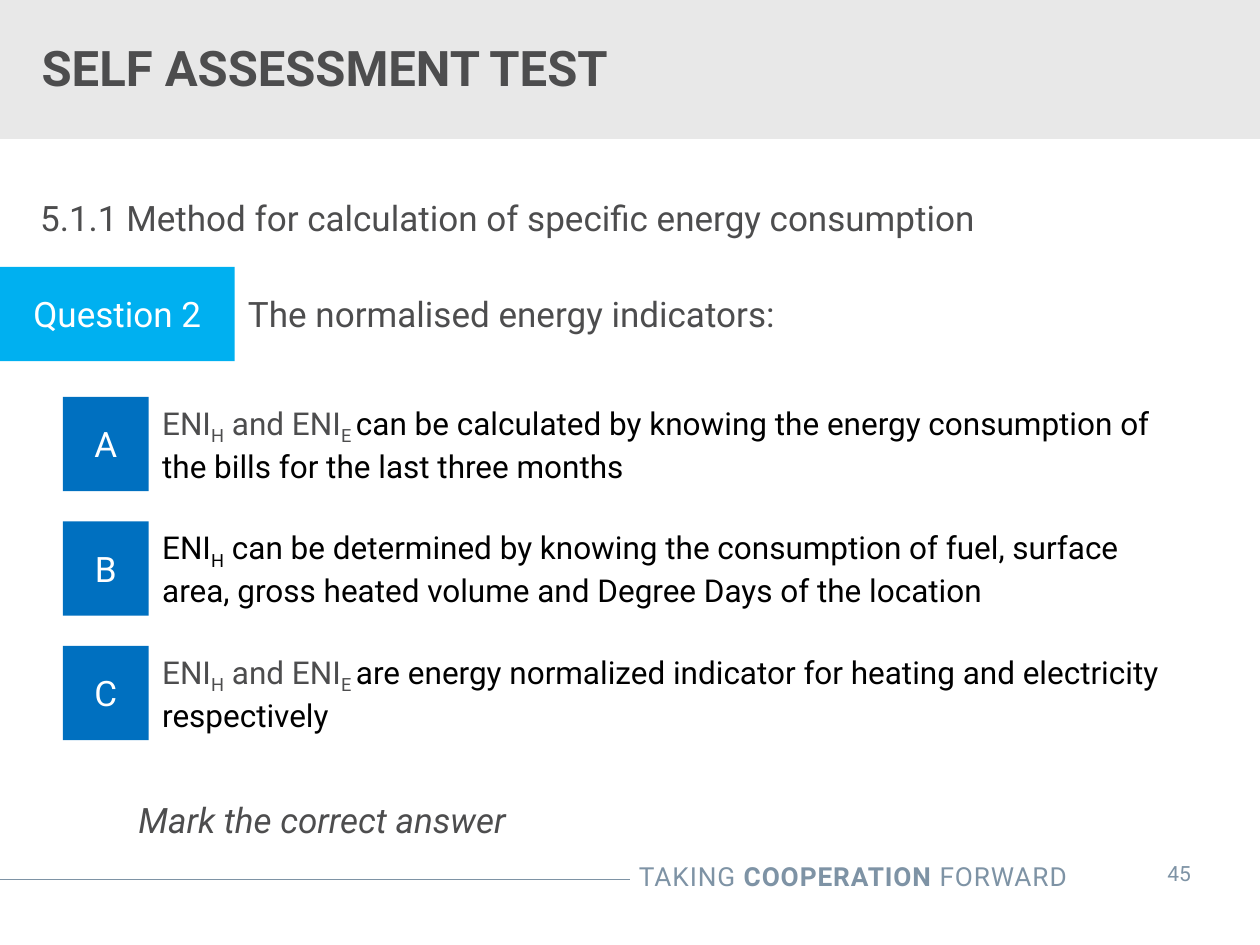
"""Build the self assessment slide on normalised energy indicators."""
from lxml import etree
from pptx import Presentation
from pptx.dml.color import RGBColor
from pptx.enum.shapes import MSO_CONNECTOR, MSO_SHAPE
from pptx.enum.text import MSO_ANCHOR, MSO_AUTO_SIZE, PP_ALIGN
from pptx.oxml.ns import qn
from pptx.util import Cm, Pt

RECTANGLE, STRAIGHT = MSO_SHAPE.RECTANGLE, MSO_CONNECTOR.STRAIGHT
LEFT, CENTER, RIGHT = PP_ALIGN.LEFT, PP_ALIGN.CENTER, PP_ALIGN.RIGHT
TOP, MIDDLE = MSO_ANCHOR.TOP, MSO_ANCHOR.MIDDLE
NO_AUTOFIT = MSO_AUTO_SIZE.NONE

WHITE = RGBColor(0xFF, 0xFF, 0xFF)
BLACK = RGBColor(0x00, 0x00, 0x00)
DARK_GREY = RGBColor(0x4D, 0x4D, 0x4E)
BAND_GREY = RGBColor(0xE8, 0xE8, 0xE8)
SLATE = RGBColor(0x7E, 0x93, 0xA5)
SKY_BLUE = RGBColor(0x00, 0xB0, 0xF0)
BLUE = RGBColor(0x00, 0x70, 0xC0)

prs = Presentation()
prs.slide_width, prs.slide_height = Cm(25.4), Cm(19.05)
slide = prs.slides.add_slide(prs.slide_layouts[5])
shapes = slide.shapes


def write(holder, text, size=20, color=DARK_GREY, bold=False, italic=False,
          align=LEFT, anchor=MIDDLE, baseline=0, spacing=0):
    frame = holder.text_frame
    frame.word_wrap = True
    frame.auto_size = NO_AUTOFIT
    frame.vertical_anchor = anchor
    paragraph = frame.paragraphs[0]
    paragraph.alignment = align
    run = paragraph.add_run()
    run.text = text
    font = run.font
    font.name, font.size, font.bold, font.italic = "Roboto", Pt(size), bold, italic
    font.color.rgb = color
    properties = run._r.get_or_add_rPr()
    if baseline:
        properties.set("baseline", str(baseline * 1000))
    if spacing:
        properties.set("spc", str(int(spacing * 100)))


def add_block(left, top, width, height, fill):
    block = shapes.add_shape(RECTANGLE, Cm(left), Cm(top), Cm(width), Cm(height))
    block.shadow.inherit = False
    block.fill.solid()
    block.fill.fore_color.rgb = fill
    block.line.fill.background()
    return block


title = shapes.title
title.left, title.top, title.width, title.height = Cm(0), Cm(0.4), Cm(18.3), Cm(1.9)
title.text_frame.margin_left = Cm(0.84)
write(title, "SELF ASSESSMENT TEST", size=28, bold=True)
title_band = add_block(0, 0, 25.4, 2.8, BAND_GREY)
title.element.addprevious(title_band.element)

footer_rule = shapes.add_connector(STRAIGHT, Cm(0), Cm(17.73), Cm(12.7), Cm(17.73))
footer_rule.line.color.rgb = SLATE
footer_rule.line.width = Pt(0.75)
etree.SubElement(footer_rule.element.spPr, qn("a:effectLst"))

motto = shapes.add_textbox(Cm(9.86), Cm(17.22), Cm(11.9), Cm(0.9))
for words, bold in (("TAKING ", False), ("COOPERATION", True), (" FORWARD", False)):
    write(motto, words, size=15, color=SLATE, bold=bold, align=RIGHT, anchor=TOP, spacing=0.5)

page_number = shapes.add_textbox(Cm(22.83), Cm(17.1), Cm(1.88), Cm(1.02))
write(page_number, "45", size=12, color=SLATE, align=CENTER)

section = shapes.add_textbox(Cm(0.56), Cm(3.86), Cm(24), Cm(1.05))
write(section, "5.1.1 Method for calculation of specific energy consumption")

question_label = add_block(0, 5.38, 4.73, 1.9, SKY_BLUE)
write(question_label, "Question 2", color=WHITE, align=CENTER)
question = shapes.add_textbox(Cm(4.75), Cm(5.38), Cm(20.6), Cm(1.9))
write(question, "The normalised energy indicators:")

BOTH_INDICATORS = [("ENI", DARK_GREY, 0), ("H", DARK_GREY, -25),
                   (" and ENI", DARK_GREY, 0), ("E ", DARK_GREY, -25)]
answers = {
    "A": BOTH_INDICATORS + [("can be calculated by knowing the energy consumption of "
                             "the bills for the last three months", BLACK, 0)],
    "B": [("ENI", BLACK, 0), ("H", BLACK, -25),
          (" can be determined by knowing the consumption of fuel, surface area, "
           "gross heated volume and Degree Days of the location", BLACK, 0)],
    "C": BOTH_INDICATORS + [("are energy normalized indicator for heating and "
                             "electricity respectively", BLACK, 0)],
}
for index, (letter, parts) in enumerate(answers.items()):
    top = 8 + index * 2.51
    letter_block = add_block(1.27, top, 1.73, 1.9, BLUE)
    write(letter_block, letter, color=WHITE, align=CENTER)
    answer = shapes.add_textbox(Cm(3.02), Cm(top), Cm(20.7), Cm(1.9))
    for words, color, baseline in parts:
        write(answer, words, size=18, color=color, baseline=baseline)

instruction = shapes.add_textbox(Cm(2.54), Cm(16), Cm(12), Cm(1.05))
write(instruction, "Mark the correct answer", italic=True)

prs.save("out.pptx")
